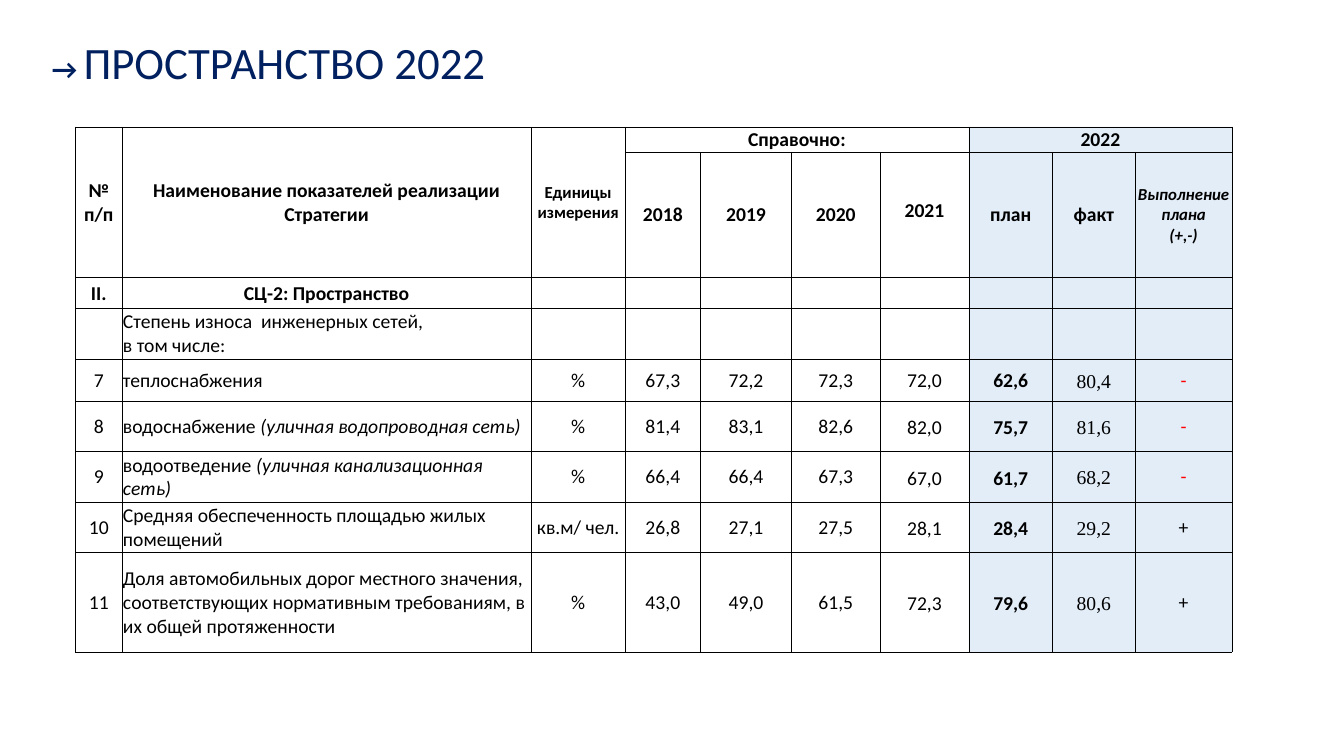
from lxml.etree import SubElement
from pptx import Presentation
from pptx.dml.color import RGBColor
from pptx.enum.text import MSO_ANCHOR, PP_ALIGN
from pptx.oxml.ns import qn
from pptx.util import Inches, Pt

COLORS = {"title": "002060", "text": "000000", "minus": "FF0000",
          "plain": "FFFFFF", "current": "DEEBF7"}
COLUMN_WIDTHS = [0.46, 4.06, 0.93, 0.75, 0.9, 0.88, 0.88, 0.83, 0.82, 0.96]
ROW_HEIGHTS = [0.25, 1.24, 0.25, 0.5, 0.42, 0.5, 0.5, 0.5, 0.99]
NAME, YEAR_2021, PLAN, FACT, RESULT = 1, 6, 7, 8, 9
FIRST_INDICATOR_ROW = 4
HEADINGS = [
    (0, 0, "№ п/п", {}),
    (0, 1, "Наименование показателей реализации Стратегии", {}),
    (0, 2, "Единицы измерения", {"size": 12}),
    (0, 3, "Справочно:", {}),
    (0, 7, "2022", {}),
    (1, 3, "2018", {}),
    (1, 4, "2019", {}),
    (1, 5, "2020", {}),
    (1, 6, "2021", {}),
    (1, 7, "план", {}),
    (1, 8, "факт", {}),
    (1, 9, "Выполнение плана\n(+,-)", {"size": 12, "italic": True}),
    (2, 0, "II.", {}),
    (2, 1, "СЦ-2: Пространство", {}),
]
INDICATORS = [
    ["7", "теплоснабжения", "%",
     "67,3", "72,2", "72,3", "72,0", "62,6", "80,4", "-"],
    ["8", "водоснабжение (уличная водопроводная сеть)", "%",
     "81,4", "83,1", "82,6", "82,0", "75,7", "81,6", "-"],
    ["9", "водоотведение (уличная канализационная сеть)", "%",
     "66,4", "66,4", "67,3", "67,0", "61,7", "68,2", "-"],
    ["10", "Средняя обеспеченность площадью жилых помещений", "кв.м/ чел.",
     "26,8", "27,1", "27,5", "28,1", "28,4", "29,2", "+"],
    ["11", "Доля автомобильных дорог местного значения, соответствующих "
     "нормативным требованиям, в их общей протяженности", "%",
     "43,0", "49,0", "61,5", "72,3", "79,6", "80,6", "+"],
]


def add_span(para, text, size=14, bold=False, italic=False, font="Calibri", color="text"):
    """Append one formatted run to a paragraph."""
    span = para.add_run()
    span.text = text
    span.font.size = Pt(size)
    span.font.bold = bold
    span.font.italic = italic
    span.font.name = font
    span.font.color.rgb = RGBColor.from_string(COLORS[color])


def write_text(frame, text, align=PP_ALIGN.CENTER, spacing=None, **style):
    """Write each line of the text as a formatted paragraph."""
    for index, line in enumerate(text.split("\n")):
        para = frame.add_paragraph() if index else frame.paragraphs[0]
        para.alignment = align
        if spacing:
            para.line_spacing = spacing
        add_span(para, line, **style)


def add_title(page):
    """Add the slide title with its leading arrow."""
    box = page.shapes.add_textbox(Inches(0.39), Inches(0.3), Inches(4.55), Inches(0.64))
    box.text_frame.word_wrap = False
    write_text(box.text_frame, "→ ", size=20, bold=True, color="title")
    add_span(box.text_frame.paragraphs[0], "ПРОСТРАНСТВО 2022", size=32, color="title")


def set_margins(cell, side, top):
    """Set the side and top margins of a cell and clear the bottom one."""
    cell.margin_left = cell.margin_right = Inches(side)
    cell.margin_top = Inches(top)
    cell.margin_bottom = 0


def style_cell(cell, is_current):
    """Give a cell its borders, fill, anchor and margins."""
    properties = cell._tc.get_or_add_tcPr()
    for side in ("lnL", "lnR", "lnT", "lnB"):
        line = SubElement(properties, qn(f"a:{side}"), w=str(Pt(0.5)))
        fill = SubElement(line, qn("a:solidFill"))
        SubElement(fill, qn("a:srgbClr"), val=COLORS["text"])
    cell.fill.solid()
    cell.fill.fore_color.rgb = RGBColor.from_string(COLORS["current" if is_current else "plain"])
    if is_current:
        color = properties.find(qn("a:solidFill")).find(qn("a:srgbClr"))
        SubElement(color, qn("a:alpha"), val="85000")
    cell.vertical_anchor = MSO_ANCHOR.MIDDLE
    set_margins(cell, 0.01, 0.01)


def write_indicator(cell, text, row, column):
    """Write one value of an indicator in the style of its column."""
    style = {}
    if column == FACT or (row > FIRST_INDICATOR_ROW and column in (YEAR_2021, PLAN)):
        set_margins(cell, 0.07, 0)
        style["spacing"] = 1.15
    if column == NAME:
        style["align"] = PP_ALIGN.LEFT
    elif column == PLAN:
        style["bold"] = True
    elif column == FACT:
        style["font"] = "Times New Roman"
    elif column == RESULT and text == "-":
        style["color"] = "minus"
    main_part, bracket, note = text.partition("(")
    write_text(cell.text_frame, main_part, **style)
    if bracket:
        add_span(cell.text_frame.paragraphs[0], bracket + note, italic=True)


def add_indicator_table(page):
    """Add the table of indicators by year."""
    frame = page.shapes.add_table(len(ROW_HEIGHTS), len(COLUMN_WIDTHS), Inches(0.75),
                                  Inches(1.26), Inches(11.47), Inches(5.2))
    table = frame.table
    table.first_row = table.horz_banding = False
    for column, width in zip(table.columns, COLUMN_WIDTHS):
        column.width = Inches(width)
    for row, height in zip(table.rows, ROW_HEIGHTS):
        row.height = Inches(height)
        for index, cell in enumerate(row.cells):
            style_cell(cell, index >= PLAN)
    for column in range(3):
        table.cell(0, column).merge(table.cell(1, column))
    table.cell(0, 3).merge(table.cell(0, YEAR_2021))
    table.cell(0, PLAN).merge(table.cell(0, RESULT))
    for row, column, text, style in HEADINGS:
        write_text(table.cell(row, column).text_frame, text, bold=True, **style)
    table.cell(1, YEAR_2021).margin_bottom = Inches(0.08)
    write_text(table.cell(3, NAME).text_frame,
               "Степень износа  инженерных сетей,\nв том числе:", align=PP_ALIGN.LEFT)
    for row, values in enumerate(INDICATORS, FIRST_INDICATOR_ROW):
        for column, text in enumerate(values):
            write_indicator(table.cell(row, column), text, row, column)


def main():
    """Build the slide and save the deck."""
    deck = Presentation()
    deck.slide_width, deck.slide_height = Inches(13.33), Inches(7.5)
    page = deck.slides.add_slide(deck.slide_layouts[6])
    add_title(page)
    add_indicator_table(page)
    deck.save("out.pptx")


if __name__ == "__main__":
    main()
